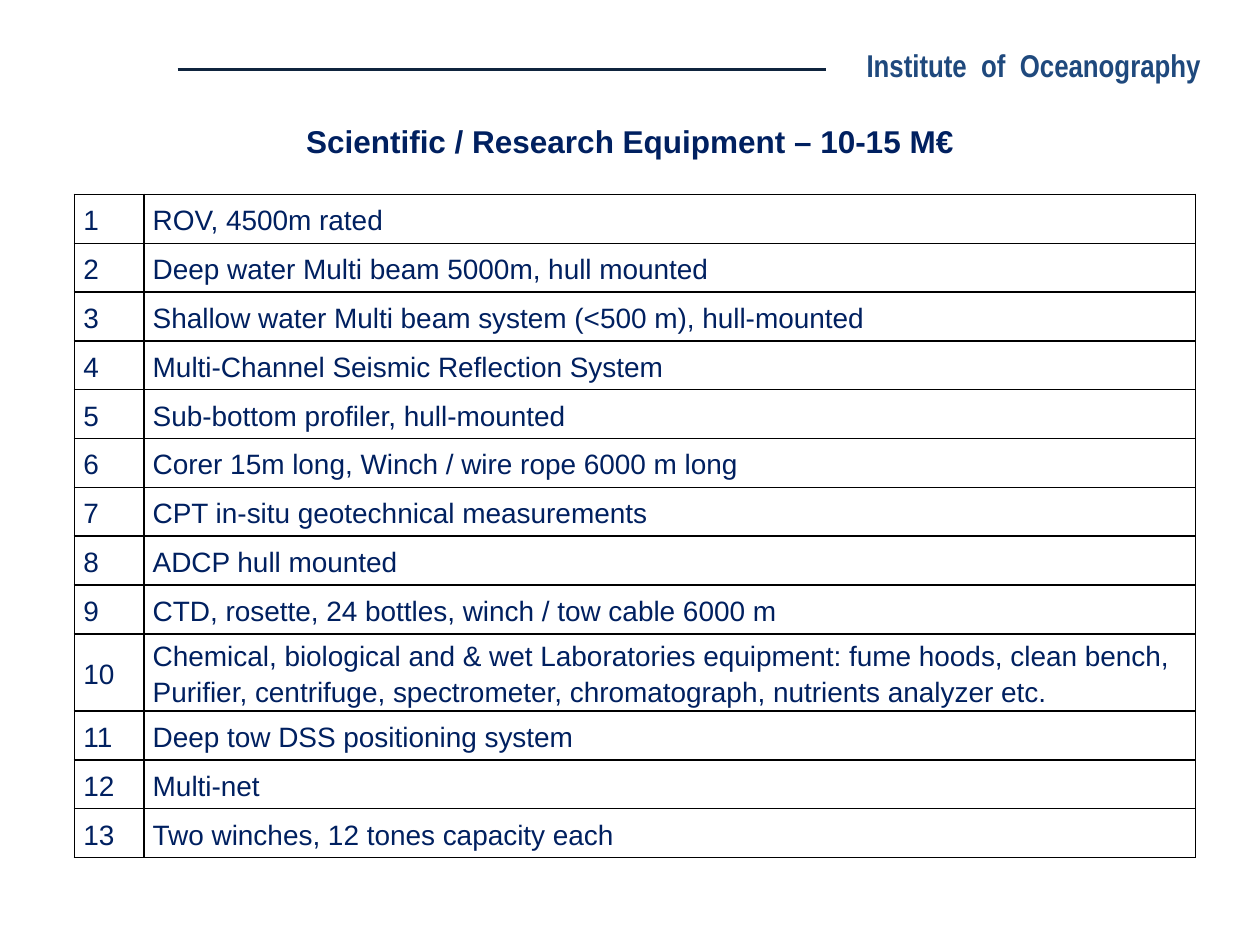
from dataclasses import dataclass

from lxml import etree
from pptx import Presentation
from pptx.dml.color import RGBColor
from pptx.enum.shapes import MSO_CONNECTOR
from pptx.enum.text import MSO_ANCHOR, PP_ALIGN
from pptx.oxml.ns import qn
from pptx.util import Cm, Pt

STRAIGHT = MSO_CONNECTOR.STRAIGHT
MIDDLE = MSO_ANCHOR.MIDDLE
TOP = MSO_ANCHOR.TOP
CENTER = PP_ALIGN.CENTER
BLANK_LAYOUT = 6


@dataclass(frozen=True)
class Theme:
    """Colours, fonts and sizes of the slide."""
    rule: str = "0F243E"
    header: str = "1F497D"
    text: str = "002060"
    border: str = "000000"
    body_font: str = "Arial"
    header_font: str = "Arial Narrow"
    heading_size: int = 18
    table_size: int = 16
    rule_width: float = 1.5
    border_width: float = 1


THEME = Theme()

EQUIPMENT = [
    "ROV, 4500m rated",
    "Deep water Multi beam 5000m, hull mounted",
    "Shallow water Multi beam system (<500 m), hull-mounted",
    "Multi-Channel Seismic Reflection System",
    "Sub-bottom profiler, hull-mounted",
    "Corer 15m long, Winch / wire rope 6000 m long",
    "CPT in-situ geotechnical measurements",
    "ADCP hull mounted",
    "CTD, rosette, 24 bottles, winch / tow cable 6000 m",
    "Chemical, biological and & wet Laboratories equipment: fume hoods, "
    "clean bench, Purifier, centrifuge, spectrometer, chromatograph, "
    "nutrients analyzer etc.",
    "Deep tow DSS positioning system",
    "Multi-net",
    "Two winches, 12 tones capacity each",
]


def style_font(paragraph, name, size, color, bold=False):
    """Format every run of a paragraph."""
    for run in paragraph.runs:
        run.font.name = name
        run.font.size = Pt(size)
        run.font.bold = bold
        run.font.color.rgb = RGBColor.from_string(color)


def add_heading(slide, text, box, font, color, anchor):
    """Add a bold centred line of text."""
    shape = slide.shapes.add_textbox(*(Cm(value) for value in box))
    text_frame = shape.text_frame
    text_frame.word_wrap = True
    text_frame.vertical_anchor = anchor
    text_frame.text = text
    paragraph = text_frame.paragraphs[0]
    paragraph.alignment = CENTER
    style_font(paragraph, font, THEME.heading_size, color, bold=True)


def add_rule(slide, left, right, top):
    """Add the horizontal header line."""
    connector = slide.shapes.add_connector(
        STRAIGHT, Cm(left), Cm(top), Cm(right), Cm(top))
    connector.line.color.rgb = RGBColor.from_string(THEME.rule)
    connector.line.width = Pt(THEME.rule_width)
    etree.SubElement(connector.element.spPr, qn("a:effectLst"))


def add_borders(cell):
    """Draw all four borders of a cell."""
    properties = cell._tc.get_or_add_tcPr()
    for side in ("a:lnL", "a:lnR", "a:lnT", "a:lnB"):
        line = etree.SubElement(
            properties, qn(side), w=str(Pt(THEME.border_width)))
        fill = etree.SubElement(line, qn("a:solidFill"))
        etree.SubElement(fill, qn("a:srgbClr"), val=THEME.border)


def fill_cell(cell, text):
    """Write and format one table cell."""
    add_borders(cell)
    cell.fill.background()
    cell.vertical_anchor = MIDDLE
    cell.margin_left = cell.margin_right = Cm(0.18)
    cell.margin_top = cell.margin_bottom = 0
    cell.text_frame.text = text
    paragraph = cell.text_frame.paragraphs[0]
    paragraph.line_spacing = 1.15
    paragraph.space_after = Pt(2)
    style_font(paragraph, THEME.body_font, THEME.table_size, THEME.text)


def add_equipment_table(slide, items):
    """Add the numbered equipment table."""
    table = slide.shapes.add_table(
        len(items), 2, Cm(1.5), Cm(3.92), Cm(22.6), Cm(12.8)).table
    table.first_row = False
    table.horz_banding = False
    table.columns[0].width = Cm(1.4)
    table.columns[1].width = Cm(21.2)
    for index, item in enumerate(items):
        fill_cell(table.cell(index, 0), str(index + 1))
        fill_cell(table.cell(index, 1), item)


def main():
    """Build and save the slide."""
    presentation = Presentation()
    presentation.slide_width = Cm(25.4)
    presentation.slide_height = Cm(19.05)
    slide = presentation.slides.add_slide(
        presentation.slide_layouts[BLANK_LAYOUT])
    add_rule(slide, 3.58, 16.66, 1.4)
    add_heading(slide, "Institute  of  Oceanography", (16.28, 0, 9.12, 2.6),
                THEME.header_font, THEME.header, MIDDLE)
    add_equipment_table(slide, EQUIPMENT)
    add_heading(slide, "Scientific / Research Equipment – 10-15 M€",
                (0, 2.34, 25.4, 1.02), THEME.body_font, THEME.text, TOP)
    presentation.save("out.pptx")


if __name__ == "__main__":
    main()
